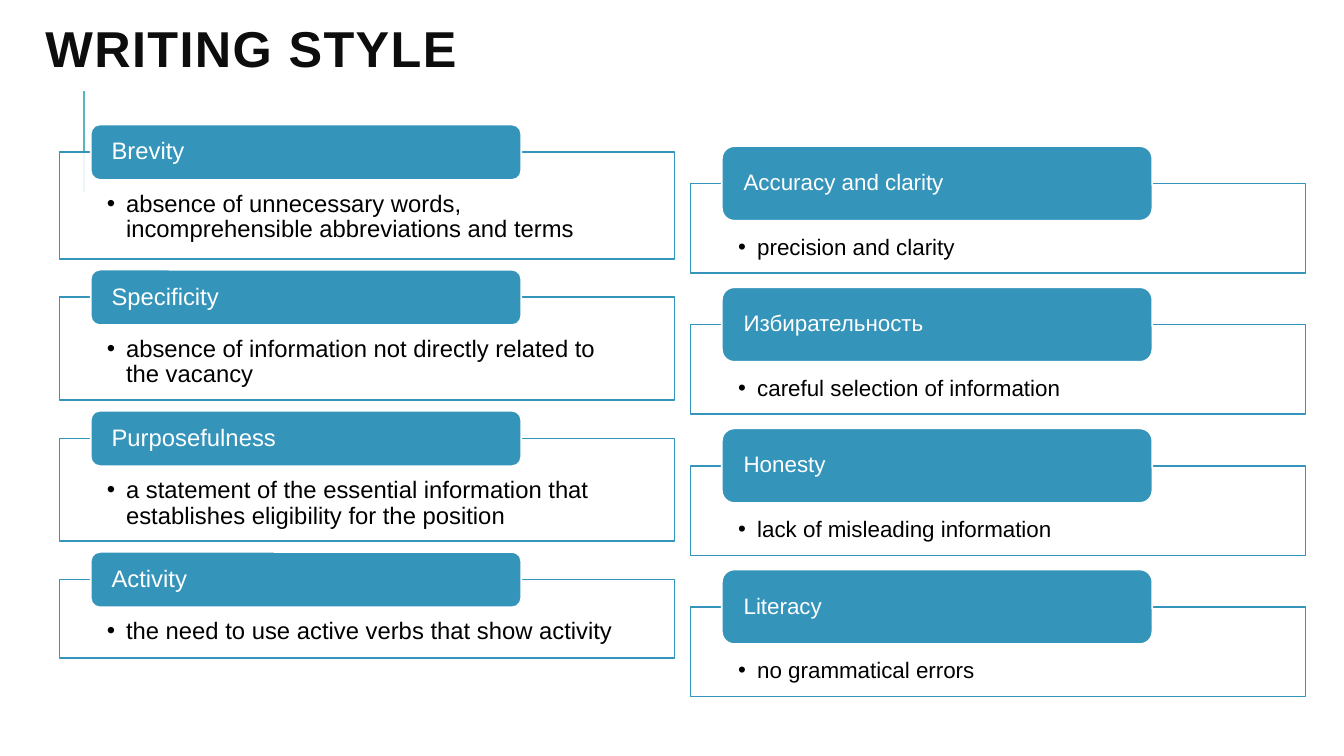
from dataclasses import dataclass

from lxml.etree import SubElement
from pptx import Presentation
from pptx.dml.color import RGBColor
from pptx.enum.shapes import MSO_CONNECTOR, MSO_SHAPE
from pptx.enum.text import MSO_ANCHOR as ANCHOR, MSO_AUTO_SIZE, PP_ALIGN
from pptx.oxml.ns import qn
from pptx.util import Inches, Pt


@dataclass(frozen=True)
class Theme:
    font: str = "Arial"
    title: RGBColor = RGBColor(0x0D, 0x0D, 0x0D)
    text: RGBColor = RGBColor(0, 0, 0)
    white: RGBColor = RGBColor(255, 255, 255)
    blue: RGBColor = RGBColor(0x34, 0x94, 0xBA)
    teal: RGBColor = RGBColor(0x58, 0xB6, 0xC0)
    title_size: int = 36
    outline: float = 1.25
    rule: float = 1.5


@dataclass(frozen=True)
class Column:
    left: float
    top: float
    gap: float
    label_height: float
    text_top: float
    size: int
    items: tuple


THEME = Theme()
PANEL_WIDTH = 6.1
LABEL_WIDTH = 4.27
LABEL_INDENT = 0.31

COLUMNS = (
    Column(0.59, 1.51, 0.38, 0.55, 0.39, 17, (
        ("Brevity", "absence of unnecessary words, incomprehensible abbreviations and terms", 1.06),
        ("Specificity", "absence of information not directly related to the vacancy", 1.02),
        ("Purposefulness", "a statement of the essential information that establishes "
                           "eligibility for the position", 1.02),
        ("Activity", "the need to use active verbs that show activity", 0.78),
    )),
    Column(6.85, 1.82, 0.51, 0.74, 0.52, 16, (
        ("Accuracy and clarity", "precision and clarity", 0.89),
        ("Избирательность", "careful selection of information", 0.89),
        ("Honesty", "lack of misleading information", 0.89),
        ("Literacy", "no grammatical errors", 0.89),
    )),
)


def set_attrs(obj, **values):
    for name, value in values.items():
        setattr(obj, name, value)


def write_text(tf, text, size, color, anchor, spacing=0.9, bold=False):
    set_attrs(tf, word_wrap=True, auto_size=MSO_AUTO_SIZE.NONE, vertical_anchor=anchor)
    p = tf.paragraphs[0]
    set_attrs(p, alignment=PP_ALIGN.LEFT, line_spacing=spacing)
    r = p.add_run()
    r.text = text
    set_attrs(r.font, name=THEME.font, size=Pt(size), bold=bold)
    r.font.color.rgb = color
    return p


def add_title(s, text):
    sp = s.shapes.title
    set_attrs(sp, left=Inches(0.35), top=Inches(0.2), width=Inches(9), height=Inches(0.65))
    p = write_text(sp.text_frame, text, THEME.title_size, THEME.title, ANCHOR.MIDDLE, 0.8, True)
    p.runs[0].font._element.set("spc", "100")


def add_rule(s, x, top, bottom):
    line = s.shapes.add_connector(
        MSO_CONNECTOR.STRAIGHT, Inches(x), Inches(bottom), Inches(x), Inches(top))
    line.line.color.rgb = THEME.teal
    line.line.width = Pt(THEME.rule)
    SubElement(line._element.spPr, qn("a:effectLst"))


def add_box(shapes, kind, box, fill, outline, insets):
    sp = shapes.add_shape(kind, *map(Inches, box))
    sp.shadow.inherit = False
    sp.fill.solid()
    sp.fill.fore_color.rgb = fill
    sp.line.color.rgb = outline
    sp.line.width = Pt(THEME.outline)
    sides = ("margin_left", "margin_top", "margin_right", "margin_bottom")
    set_attrs(sp.text_frame, **dict(zip(sides, map(Inches, insets))))
    return sp


def add_bullet(p):
    pPr = p._p.get_or_add_pPr()
    pPr.set("marL", str(Inches(0.19)))
    pPr.set("indent", str(Inches(-0.19)))
    SubElement(pPr, qn("a:buFont"), typeface=THEME.font)
    SubElement(pPr, qn("a:buChar"), char="•")


def add_panel(shapes, column, top, height, text):
    sp = add_box(shapes, MSO_SHAPE.RECTANGLE, (column.left, top, PANEL_WIDTH, height),
                 THEME.white, THEME.blue, (0.47, column.text_top, 0.47, 0.12))
    color = sp._element.spPr.find(qn("a:solidFill"))[0]
    SubElement(color, qn("a:alpha"), val="90000")
    add_bullet(write_text(sp.text_frame, text, column.size, THEME.text, ANCHOR.TOP))


def add_label(shapes, column, top, text):
    box = (column.left + LABEL_INDENT, top - column.label_height / 2,
           LABEL_WIDTH, column.label_height)
    sp = add_box(shapes, MSO_SHAPE.ROUNDED_RECTANGLE, box,
                 THEME.blue, THEME.white, (0.18, 0, 0.18, 0))
    write_text(sp.text_frame, text, column.size, THEME.white, ANCHOR.MIDDLE)


def add_column(s, column):
    shapes = s.shapes.add_group_shape().shapes
    top = column.top
    for label, text, height in column.items:
        add_panel(shapes, column, top, height, text)
        add_label(shapes, column, top, label)
        top += height + column.gap


def main():
    prs = Presentation()
    set_attrs(prs, slide_width=Inches(13.33), slide_height=Inches(7.5))
    s = prs.slides.add_slide(prs.slide_layouts[5])
    add_rule(s, 0.83, 0.9, 1.9)
    add_title(s, "WRITING STYLE")
    for column in COLUMNS:
        add_column(s, column)
    prs.save("out.pptx")


if __name__ == "__main__":
    main()
